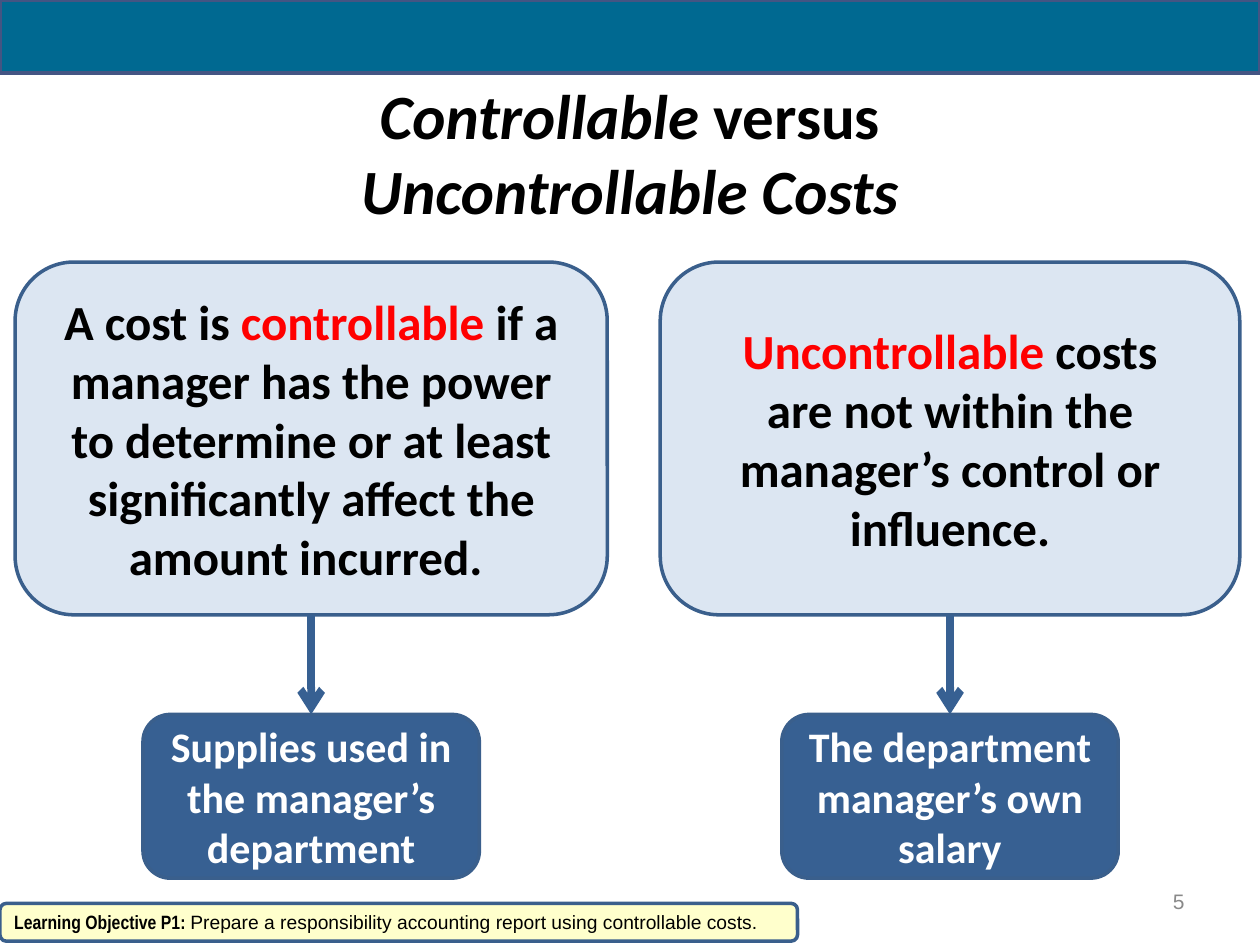
import pptx
import pptx.enum.shapes
import pptx.enum.text
import pptx.oxml
import pptx.util
from pptx.dml.color import RGBColor
from pptx.oxml.ns import qn
from pptx.util import Inches

SHAPE = pptx.enum.shapes.MSO_SHAPE
ALIGN = pptx.enum.text.PP_ALIGN
COLORS = {
    "band": "006991", "band_line": "445583", "panel": "DCE6F2",
    "outline": "3A5F8C", "example": "376092", "note": "FFFFCC",
    "black": "000000", "white": "FFFFFF", "red": "FF0000", "gray": "898989",
}


def rgb(name):
    return RGBColor.from_string(COLORS[name])


def write(shape, paragraphs, size, color="black", align=ALIGN.CENTER,
          font="Calibri", bold=True):
    """Fill a shape with paragraphs; each is a list of (text, overrides)."""
    frame = shape.text_frame
    frame.word_wrap = True
    frame.vertical_anchor = pptx.enum.text.MSO_ANCHOR.MIDDLE
    for index, spans in enumerate(paragraphs):
        para = frame.add_paragraph() if index else frame.paragraphs[0]
        para.alignment = align
        for text, style in spans:
            if text == "\n":
                para.add_line_break()
                continue
            span = para.add_run()
            span.text = text
            span.font.size = pptx.util.Pt(size)
            span.font.name = style.get("font", font)
            span.font.bold = style.get("bold", bold)
            span.font.italic = style.get("italic", False)
            span.font.color.rgb = rgb(style.get("color", color))


def add_block(page, box, fill, line="outline", width=2,
              kind=SHAPE.ROUNDED_RECTANGLE):
    shape = page.shapes.add_shape(kind, *map(Inches, box))
    shape.shadow.inherit = False
    shape.fill.solid()
    shape.fill.fore_color.rgb = rgb(fill)
    shape.line.color.rgb = rgb(line)
    shape.line.width = pptx.util.Pt(width)
    return shape


def add_arrow(page, start, end):
    """Join the bottom of one block to the top of another."""
    arrow = page.shapes.add_connector(
        pptx.enum.shapes.MSO_CONNECTOR.STRAIGHT, 0, 0, 0, 0)
    arrow.begin_connect(start, 2)
    arrow.end_connect(end, 0)
    arrow.line.color.rgb = rgb("example")
    arrow.line.width = pptx.util.Pt(4.5)
    tail = pptx.oxml.parse_xml(
        '<a:tailEnd xmlns:a="http://schemas.openxmlformats.org/drawingml/2006/main"'
        ' type="arrow"/>')
    arrow.line._get_or_add_ln().append(tail)
    properties = arrow._element.spPr
    properties.append(properties.makeelement(qn("a:effectLst"), {}))


def add_header(page, box):
    left, top, width, band_height = box
    add_block(page, box, "band", "band_line", 2.25, SHAPE.RECTANGLE)
    title = page.shapes.add_textbox(
        Inches(left + 0.5), Inches(top + band_height),
        Inches(width - 1), Inches(1.25))
    write(title, [[("Controllable", {"italic": True}), (" versus", {}),
                   ("\n", {}), ("Uncontrollable Costs", {"italic": True})]], 36)


def add_cost_column(page, box, definition, example):
    """Place a definition at the top of the box and its example at the bottom."""
    left, top, width, height = box
    panel = add_block(page, (left, top, width, 2.8), "panel")
    write(panel, definition, 28)
    example_width, example_height = 2.67, 1.3
    example_box = add_block(
        page, (left + (width - example_width) / 2,
               top + height - example_height,
               example_width, example_height), "example")
    write(example_box, [[(example, {})]], 24, "white")
    add_arrow(page, panel, example_box)


def add_footer(page, box):
    left, top, width, height = box
    number = page.shapes.add_textbox(
        Inches(left + width - 2.83), Inches(top), Inches(2.33), Inches(0.4))
    write(number, [[("5", {})]], 12, "gray", ALIGN.RIGHT, "Arial", False)
    note = add_block(page, (left, top + 0.22, 6.33, height - 0.22), "note")
    write(note, [[
        ("Learning Objective P1: ", {"font": "Arial Narrow", "bold": True}),
        ("Prepare a responsibility accounting report using controllable costs.", {}),
    ]], 11, align=ALIGN.LEFT, font="Arial", bold=False)


def main():
    deck = pptx.Presentation()
    deck.slide_width, deck.slide_height = Inches(10), Inches(7.5)
    page = deck.slides.add_slide(deck.slide_layouts[6])
    add_header(page, (0, 0, 10, 0.58))

    # Controllable on the left, uncontrollable on the right
    red = {"color": "red"}
    add_cost_column(
        page, (0.12, 2.08, 4.7, 4.89),
        [[("A cost is ", {}), ("controllable ", red),
          ("if a manager has the power to determine or at least "
           "significantly affect the amount incurred. ", {})]],
        "Supplies used in the manager’s department")
    add_cost_column(
        page, (5.24, 2.08, 4.6, 4.89),
        [[("Uncontrollable", red), (" costs", {})],
         [("are not within the manager’s control or influence.", {})]],
        "The department manager’s own salary")

    add_footer(page, (0, 6.95, 10, 0.52))
    deck.save("out.pptx")


if __name__ == "__main__":
    main()
